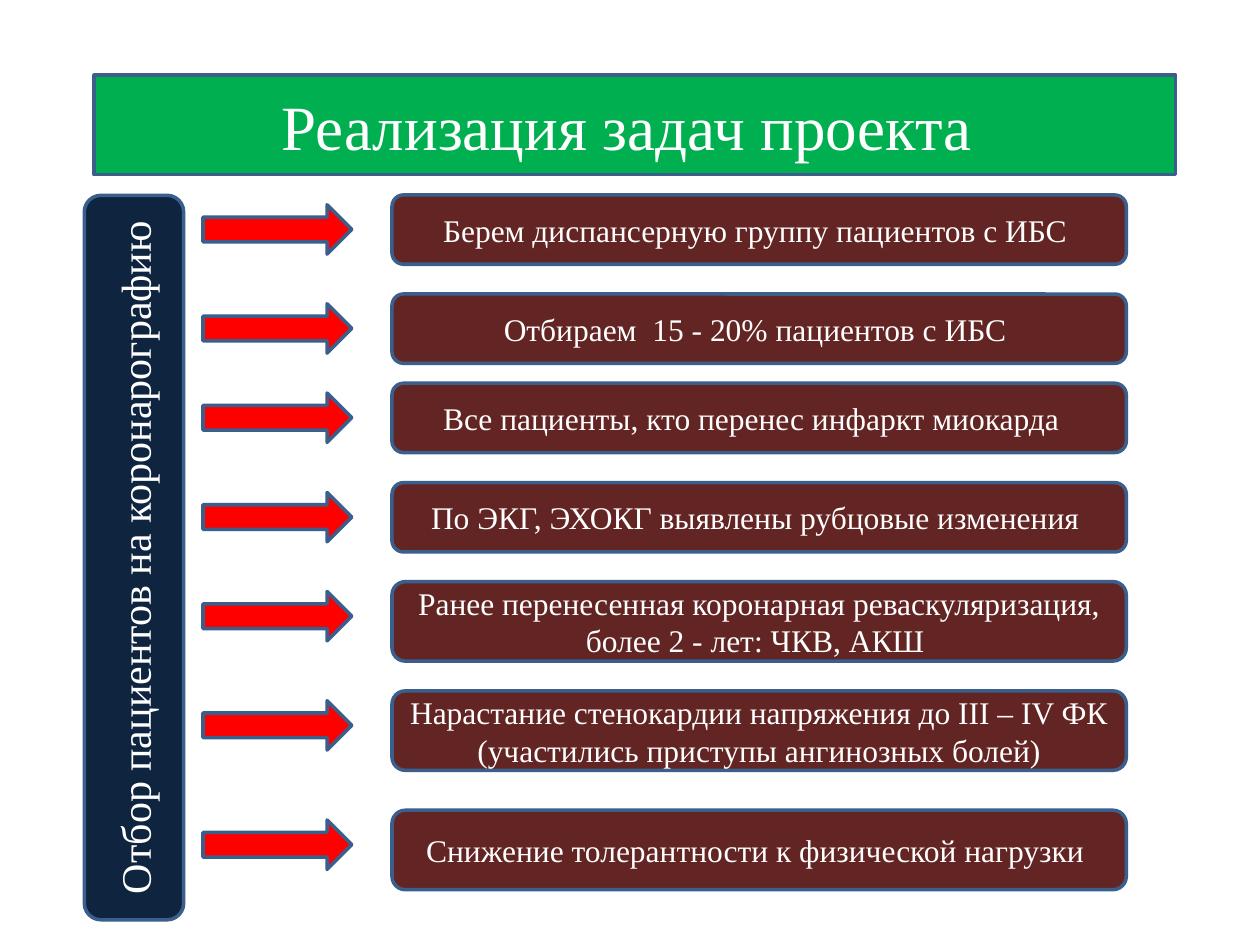
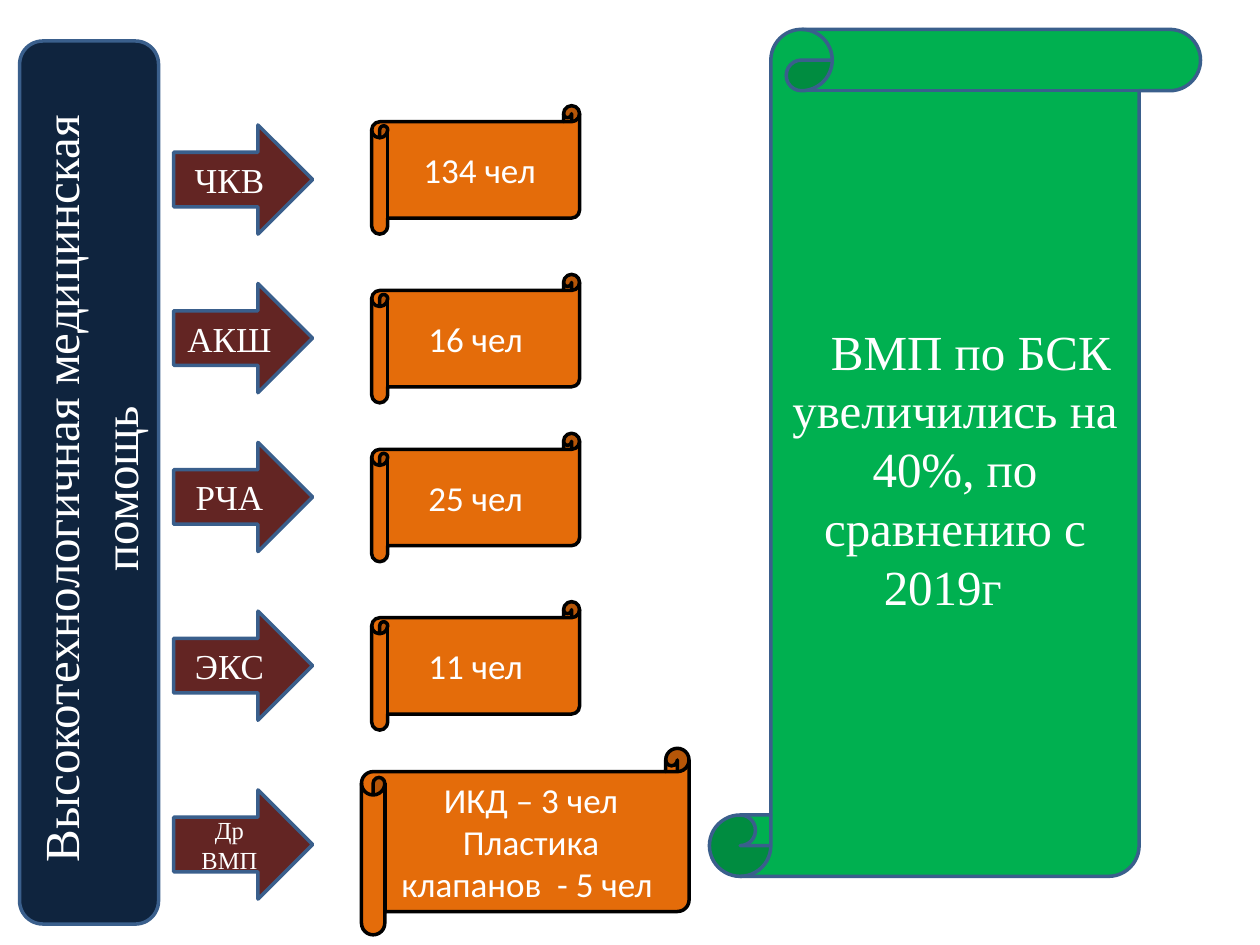
from dataclasses import dataclass

from pptx import Presentation
from pptx.dml.color import RGBColor
from pptx.enum.shapes import MSO_SHAPE
from pptx.enum.text import MSO_ANCHOR, PP_ALIGN
from pptx.util import Pt

RECTANGLE = MSO_SHAPE.RECTANGLE
ROUNDED = MSO_SHAPE.ROUNDED_RECTANGLE
ALTERNATE_PROCESS = MSO_SHAPE.FLOWCHART_ALTERNATE_PROCESS
RIGHT_ARROW = MSO_SHAPE.RIGHT_ARROW
HORIZONTAL_SCROLL = MSO_SHAPE.HORIZONTAL_SCROLL
VERTICAL_SCROLL = MSO_SHAPE.VERTICAL_SCROLL
CENTER = PP_ALIGN.CENTER
MIDDLE = MSO_ANCHOR.MIDDLE


@dataclass(frozen=True)
class Theme:
    green: str = "00B050"
    navy: str = "0F243E"
    red: str = "FF0000"
    maroon: str = "632523"
    orange: str = "E46C0A"
    outline: str = "3A5F8C"
    black: str = "000000"
    white: str = "FFFFFF"
    serif: str = "Times New Roman"
    sans: str = "Calibri"
    line_width: float = 2
    title_size: float = 36
    large_size: float = 28
    band_size: float = 24
    label_size: float = 20
    body_size: float = 18
    small_size: float = 14


THEME = Theme()


@dataclass(frozen=True)
class Box:
    left: float
    top: float
    width: float
    height: float


@dataclass(frozen=True)
class Label:
    text: str
    size: float
    font: str = THEME.serif
    margin: float = 0
    indent: float = 0


@dataclass(frozen=True)
class Criterion:
    text: str
    top: float
    height: float = 39.6


@dataclass(frozen=True)
class Procedure:
    name: str
    arrow_top: float
    result: str
    scroll: Box
    name_size: float = THEME.label_size


def result_box(top: float) -> Box:
    return Box(212.4, top, 118.8, 73.4)


CRITERIA = (
    Criterion("Берем диспансерную группу пациентов с ИБС ", 111.4),
    Criterion("Отбираем  15 - 20% пациентов с ИБС ", 168),
    Criterion("Все пациенты, кто перенес инфаркт миокарда  ", 219),
    Criterion("По ЭКГ, ЭХОКГ выявлены рубцовые изменения ", 275.8),
    Criterion("Ранее перенесенная коронарная реваскуляризация, "
              "более 2 - лет: ЧКВ, АКШ ", 332.4, 45.4),
    Criterion("Нарастание стенокардии напряжения до III – IV ФК "
              "(участились приступы ангинозных болей)", 394.8, 45.4),
    Criterion("Снижение толерантности к физической нагрузки ", 463, 45.4),
)

PROCEDURES = (
    Procedure("ЧКВ", 71.4, "134 чел", result_box(60.4)),
    Procedure("АКШ", 162, "16 чел ", result_box(156.8)),
    Procedure("РЧА", 252.8, "25 чел ", result_box(247.6)),
    Procedure("ЭКС", 349.2, "11 чел ", result_box(343.8)),
    Procedure("Др ВМП", 451.4, "ИКД – 3 чел\nПластика клапанов  - 5 чел ",
              Box(206.6, 427.6, 187.2, 106.6), THEME.small_size),
)


def write_label(shape, label: Label) -> None:
    frame = shape.text_frame
    frame.word_wrap = True
    frame.vertical_anchor = MIDDLE
    frame.text = label.text
    for paragraph in frame.paragraphs:
        paragraph.alignment = CENTER
        paragraph.font.name = label.font
        paragraph.font.size = Pt(label.size)
        paragraph.font.color.rgb = RGBColor.from_string(THEME.white)
        if label.indent:
            properties = paragraph._p.get_or_add_pPr()
            properties.set("marL", str(Pt(label.margin)))
            properties.set("indent", str(Pt(label.indent)))


def draw_shape(slide, kind, box: Box, fill: str, label: Label | None = None,
               line: str = THEME.outline, rotation: float = 0) -> None:
    shape = slide.shapes.add_shape(
        kind, Pt(box.left), Pt(box.top), Pt(box.width), Pt(box.height))
    shape.rotation = rotation
    shape.shadow.inherit = False
    shape.fill.solid()
    shape.fill.fore_color.rgb = RGBColor.from_string(fill)
    shape.line.color.rgb = RGBColor.from_string(line)
    shape.line.width = Pt(THEME.line_width)
    if label:
        write_label(shape, label)


def draw_side_band(slide, kind, box: Box, label: Label) -> None:
    draw_shape(slide, kind, box, THEME.navy, label, rotation=270)


def draw_criterion(slide, criterion: Criterion) -> None:
    draw_shape(slide, RIGHT_ARROW, Box(116, criterion.top + 5.6, 85, 28.2), THEME.red)
    draw_shape(slide, ROUNDED, Box(224, criterion.top, 419.6, criterion.height),
               THEME.maroon, Label(criterion.text, THEME.body_size))


def draw_procedure(slide, procedure: Procedure) -> None:
    draw_shape(slide, RIGHT_ARROW, Box(99.2, procedure.arrow_top, 79.4, 62.4),
               THEME.maroon, Label(procedure.name, procedure.name_size))
    draw_shape(slide, HORIZONTAL_SCROLL, procedure.scroll, THEME.orange,
               Label(procedure.result, THEME.label_size, THEME.sans), THEME.black)


def build_selection_slide(slide) -> None:
    draw_shape(slide, RECTANGLE, Box(53.8, 43, 618, 56.8), THEME.green,
               Label("Реализация задач проекта ", THEME.title_size))
    draw_side_band(slide, ROUNDED, Box(-130.4, 290.2, 414, 56.8),
                   Label("Отбор пациентов на коронарографию", THEME.band_size,
                         margin=18, indent=-18))
    for criterion in CRITERIA:
        draw_criterion(slide, criterion)


def build_care_slide(slide) -> None:
    draw_side_band(slide, ALTERNATE_PROCESS, Box(-201.4, 236, 504.6, 79.4),
                   Label("Высокотехнологичная медицинская  помощь ", THEME.large_size))
    for procedure in PROCEDURES:
        draw_procedure(slide, procedure)
    draw_shape(slide, VERTICAL_SCROLL, Box(405.4, 16.8, 280.6, 484), THEME.green,
               Label("ВМП по БСК увеличились на 40%, по сравнению с 2019г  ",
                     THEME.large_size, indent=18))


def main() -> None:
    presentation = Presentation()
    presentation.slide_width = Pt(720)
    presentation.slide_height = Pt(540)
    blank = presentation.slide_layouts[6]
    for build in (build_selection_slide, build_care_slide):
        build(presentation.slides.add_slide(blank))
    presentation.save("out.pptx")


if __name__ == "__main__":
    main()
